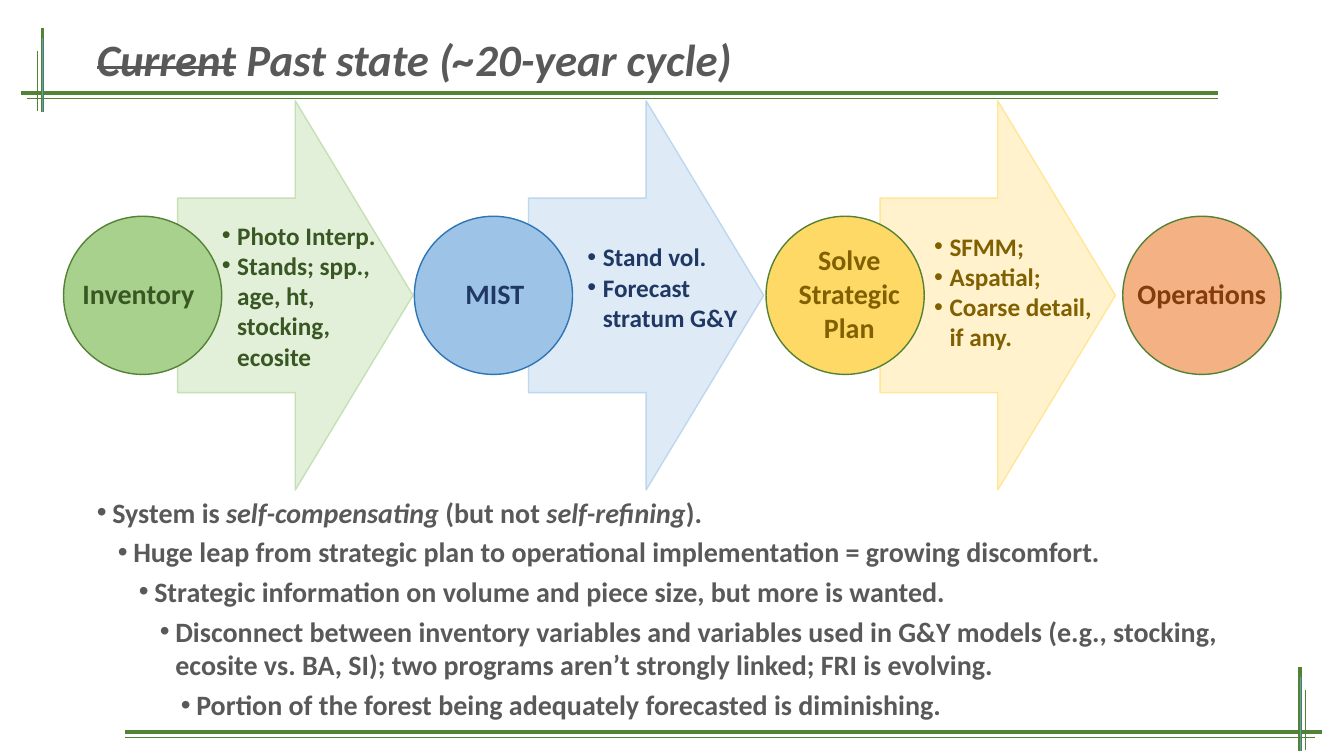
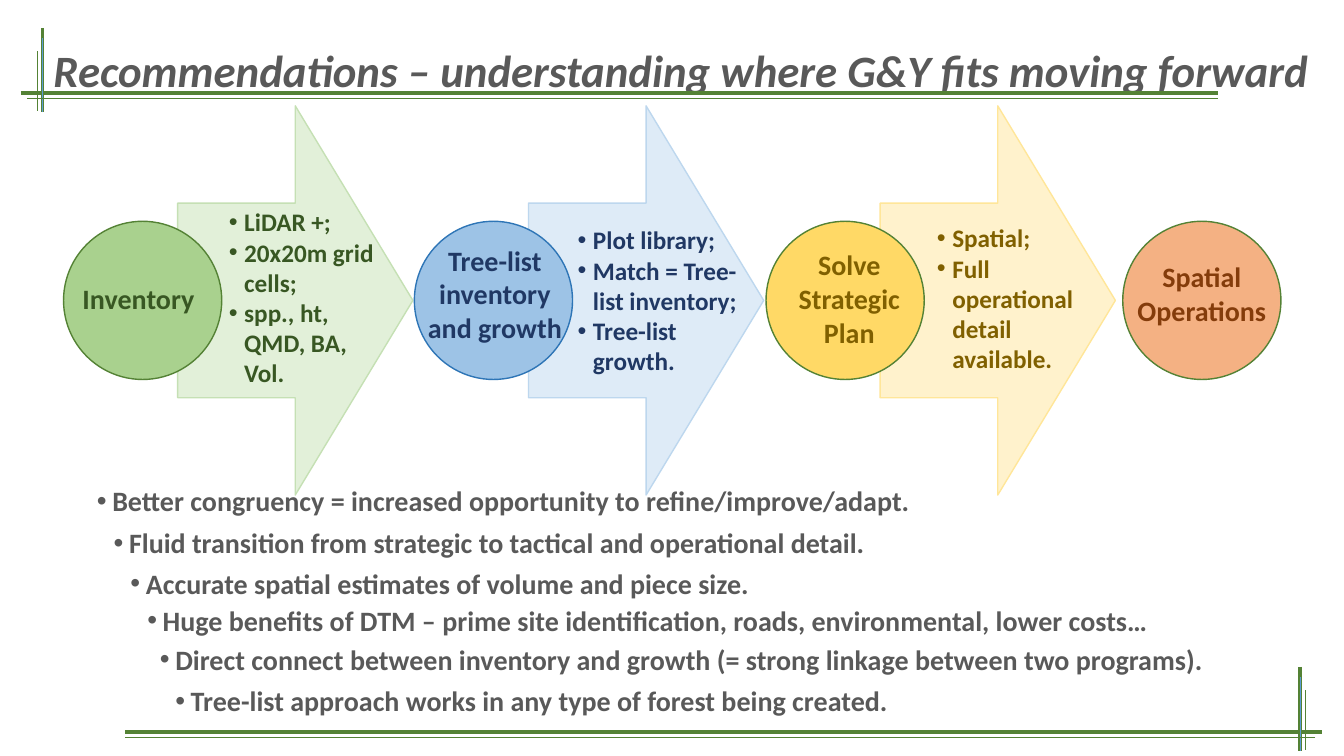
import pptx
import pptx.util
import pptx.dml.color
import pptx.enum.shapes
import pptx.enum.text
import pptx.oxml
import pptx.oxml.ns
import lxml.etree

Pt = pptx.util.Pt
ANCHOR = pptx.enum.text.MSO_ANCHOR
ALIGN = pptx.enum.text.PP_ALIGN
SHAPE = pptx.enum.shapes.MSO_SHAPE

COLOURS = {
    "text": "595959", "rule": "548235", "accent": "5B9BD5",
    "green": "A9D18E", "green pale": "E2F0D9", "green edge": "C5E0B4", "green ink": "385723",
    "blue": "9DC3E6", "blue pale": "DEEBF7", "blue edge": "BDD7EE", "blue ink": "203864",
    "blue line": "2E75B6",
    "gold": "FFD966", "gold pale": "FFF2CC", "gold edge": "FFE699", "gold ink": "806000",
    "orange": "F4B183", "orange ink": "843C0B",
}
TITLE_FONT = {"name": "Calibri", "size": Pt(32), "bold": True, "italic": True}
BODY_FONT = {"name": "Calibri", "size": Pt(20), "bold": True}
NOTE_FONT = {"name": "Calibri", "size": Pt(18), "bold": True}

DIAMETER = 113
ARROW_SIZE = (168, 278)
ARROW_SHIFT = 81.5
CIRCLE_DROP = 82.5
# Left edge, colour family, circle outline and sideways shift of the label
STAGES = [
    (45.4, "green", "rule", -3),
    (296, "blue", "blue line", 1),
    (547.2, "gold", "rule", 3),
    (802, "orange", "rule", 0),
]
# Start, end, colour and width of the rules in a corner
CORNER_RULES = [
    ((15, 66.4), (870, 66.4), "rule", 2.5),
    ((30.4, 20), (30.4, 80), "rule", 2.5),
    ((30.4, 27.2), (30.4, 80), "accent", 0.5),
    ((26.8, 36.6), (26.8, 79), "rule", 0.5),
    ((19.6, 70), (870, 70), "rule", 0.5),
]

# Titles and list items are lists of (words, style) spans.
# Labels are (words, vertical shift); notes are (left, top, items) within a stage.
# List items are (indent, space before, spans).
SLIDES = [
    {
        "title": [("Current", "strike"), (" Past state (~20-year cycle)", "")],
        "title box": (62, 19.4, 471, 46),
        "process top": 72,
        "labels": [("Inventory", 0), ("MIST", 0), ("Solve\vStrategic Plan", 0),
                   ("Operations", 0)],
        "notes": [
            (106, 81.5, ["Photo Interp.", "Stands; spp., age, ht, stocking, ecosite"]),
            (116.5, 97, ["Stand vol.", "Forecast stratum G&Y"]),
            (113, 89.5, ["SFMM;", "Aspatial;", "Coarse detail, if any."]),
        ],
        "list top": 350,
        "list": [
            (0, 0, [("System is ", ""), ("self-compensating", "italic"), (" (but not ", ""),
                    ("self-refining", "italic"), (").", "")]),
            (15, 4.4, [("Huge leap from strategic plan to operational implementation"
                        " = growing discomfort.", "")]),
            (30, 4.4, [("Strategic information on volume and piece size,"
                        " but more is wanted.", "")]),
            (45, 4.4, [("Disconnect between inventory variables and variables used in G&Y"
                        " models (e.g., stocking, ecosite vs. BA, SI); two programs aren’t"
                        " strongly linked; FRI is evolving.", "")]),
            (60, 4.4, [("Portion of the forest being adequately forecasted"
                        " is diminishing.", "")]),
        ],
    },
    {
        "title": [("Recommendations – understanding where G&Y fits moving forward", "")],
        "title box": (31, 26.6, 935, 46),
        "process top": 75.6,
        "labels": [("Inventory", 0), ("Tree-list inventory and growth", -3.4),
                   ("Solve\vStrategic Plan", 0), ("Spatial Operations", -3.4)],
        "notes": [
            (111, 68.4, ["LiDAR +;", "20x20m grid cells;", "spp., ht, QMD, BA, Vol."]),
            (109.5, 81.4, ["Plot library;", "Match = Tree-list inventory;",
                           "Tree-list growth."]),
            (115, 80, ["Spatial;", "Full operational detail available."]),
        ],
        "list top": 342,
        "list": [
            (0, 0, [("Better congruency = increased opportunity to"
                     " refine/improve/adapt.", "")]),
            (12, 5.8, [("Fluid transition from strategic to tactical and"
                        " operational detail.", "")]),
            (24, 5.2, [("Accurate spatial estimates of volume and piece size.", "")]),
            (36, 2.3, [("Huge benefits of DTM – prime site identification, roads,"
                        " environmental, lower costs…", "")]),
            (45, 3.7, [("Direct connect between inventory and growth"
                        " (= strong linkage between two programs).", "")]),
            (56, 5.8, [("Tree-list approach works in any type of forest"
                        " being created.", "")]),
        ],
    },
]


def rgb(name):
    return pptx.dml.color.RGBColor.from_string(COLOURS[name])


def set_all(target, values):
    for name, value in values.items():
        setattr(target, name, value)


def style_font(font, values, colour):
    set_all(font, values)
    font.color.rgb = rgb(colour)


def place(box, left, top, width, height):
    set_all(box, {"left": Pt(left), "top": Pt(top), "width": Pt(width), "height": Pt(height)})


def add_bullet(para, indent=0):
    properties = para._p.get_or_add_pPr()
    properties.set("marL", str(Pt(indent + 11)))
    properties.set("indent", str(-Pt(11)))
    for tag, key, value in (("a:buFont", "typeface", "Arial"), ("a:buChar", "char", "•")):
        bullet = lxml.etree.SubElement(properties, pptx.oxml.ns.qn(tag))
        bullet.set(key, value)


def next_para(frame, index):
    return frame.add_paragraph() if index else frame.paragraphs[0]


def add_spans(para, spans, values, colour):
    for words, style in spans:
        span = para.add_run()
        span.text = words
        style_font(span.font, values, colour)
        if style == "italic":
            span.font.italic = True
        elif style == "strike":
            span._r.get_or_add_rPr().set("strike", "sngStrike")


def add_preset(page, kind, bounds, fill, edge):
    shape = page.shapes.add_shape(kind, *map(Pt, bounds))
    shape.shadow.inherit = False
    shape.fill.solid()
    shape.fill.fore_color.rgb = rgb(fill)
    shape.line.color.rgb = rgb(edge)
    shape.line.width = Pt(1)


def add_text_frame(page, bounds, anchor):
    frame = page.shapes.add_textbox(*map(Pt, bounds)).text_frame
    set_all(frame, {"word_wrap": True, "vertical_anchor": anchor})
    return frame


def add_title(page, spans, bounds):
    box = page.shapes.title
    place(box, *bounds)
    set_all(box.text_frame, {"word_wrap": False, "vertical_anchor": ANCHOR.TOP,
                             "auto_size": pptx.enum.text.MSO_AUTO_SIZE.NONE})
    para = box.text_frame.paragraphs[0]
    para.alignment = ALIGN.LEFT
    add_spans(para, spans, TITLE_FONT, "text")


def add_list(page, items, top):
    """Fill the body placeholder with bullets that step to the right."""
    box = page.placeholders[1]
    place(box, 62, top, 845, 176)
    set_all(box.text_frame, {"word_wrap": True, "vertical_anchor": ANCHOR.TOP,
                             "auto_size": pptx.enum.text.MSO_AUTO_SIZE.NONE})
    for index, (indent, before, spans) in enumerate(items):
        para = next_para(box.text_frame, index)
        add_bullet(para, indent)
        para.space_before = Pt(before)
        add_spans(para, spans, BODY_FONT, "text")


def add_notes(page, left, top, items, colour):
    frame = add_text_frame(page, (left, top, 128, 30 * len(items) + 30), ANCHOR.TOP)
    for index, words in enumerate(items):
        para = next_para(frame, index)
        add_bullet(para)
        add_spans(para, [(words, "")], NOTE_FONT, colour)


def add_stage(page, stage, top, label, note):
    """Draw one circle with its label and, if it has a note, the arrow after it."""
    left, family, edge, label_shift = stage
    ink = family + " ink"
    if note:
        add_preset(page, SHAPE.RIGHT_ARROW, (left + ARROW_SHIFT, top, *ARROW_SIZE),
                   family + " pale", family + " edge")
    add_preset(page, SHAPE.OVAL, (left, top + CIRCLE_DROP, DIAMETER, DIAMETER), family, edge)
    words, drop = label
    frame = add_text_frame(page, (left + label_shift, top + 97.5 + drop, DIAMETER, 80),
                           ANCHOR.MIDDLE)
    para = frame.paragraphs[0]
    para.text = words
    para.alignment = ALIGN.CENTER
    for span in para.runs:
        style_font(span.font, BODY_FONT, ink)
    if note:
        note_left, note_top, items = note
        add_notes(page, left + note_left, top + note_top, items, ink)


def add_process(page, top, labels, notes):
    for stage, label, note in zip(STAGES, labels, notes + [None]):
        add_stage(page, stage, top, label, note)


def add_corner(page, origin, drop, direction):
    """Draw the crossing rules from origin, to the right (1) or the left (-1)."""
    for start, end, colour, width in CORNER_RULES:
        ends = [Pt(value) for x, y in (start, end)
                for value in (origin + direction * x, y + drop)]
        rule = page.shapes.add_connector(pptx.enum.shapes.MSO_CONNECTOR.STRAIGHT, *ends)
        rule.line.color.rgb = rgb(colour)
        rule.line.width = Pt(width)
        lxml.etree.SubElement(rule._element.spPr, pptx.oxml.ns.qn("a:effectLst"))


def add_slide(deck, content):
    page = deck.slides.add_slide(deck.slide_layouts[1])
    add_title(page, content["title"], content["title box"])
    add_list(page, content["list"], content["list top"])
    add_process(page, content["process top"], content["labels"], content["notes"])
    add_corner(page, 0, 0, 1)
    add_corner(page, 959, 456.4, -1)


def main():
    deck = pptx.Presentation()
    set_all(deck, {"slide_width": Pt(960), "slide_height": Pt(540)})
    for content in SLIDES:
        add_slide(deck, content)
    deck.save("out.pptx")


if __name__ == "__main__":
    main()
